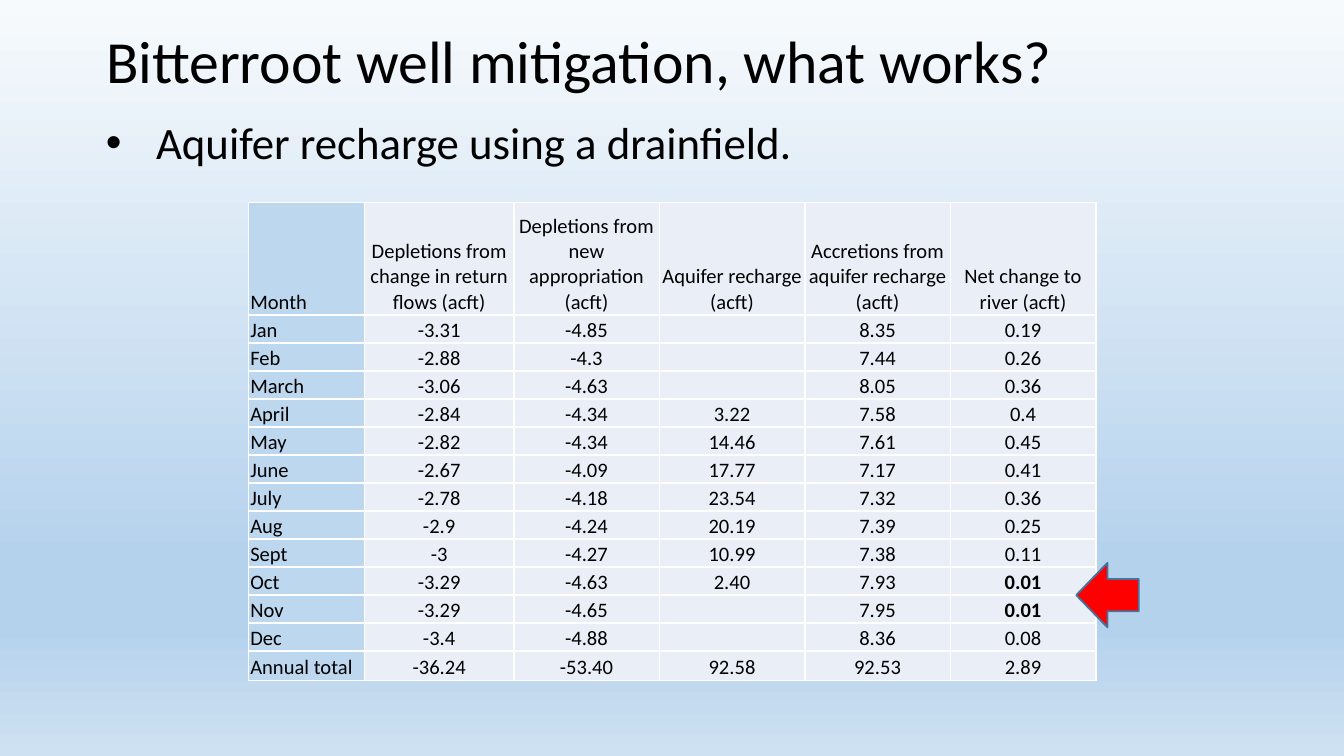
import pptx
import pptx.dml.color
import pptx.enum.shapes
import pptx.enum.text
import pptx.oxml
import pptx.oxml.ns
import pptx.util
from pptx.util import Cm

FONT = "Calibri"
COLOURS = {
    "text": "000000",
    "month": "BDD7EE",
    "value": "EAEFF7",
    "border": "FFFFFF",
    "arrow": "FF0000",
    "arrow_line": "43739E",
}
BACKGROUND_STOPS = [(0, "F7FAFD"), (74, "B5D2EC"), (83, "B5D2EC"), (100, "CEE1F2")]
HEADINGS = [
    "Month",
    "Depletions from change in return flows (acft)",
    "Depletions from new appropriation (acft)",
    "Aquifer recharge (acft)",
    "Accretions from aquifer recharge (acft)",
    "Net change to river (acft)",
]
MONTHLY_ROWS = [
    ["Jan", "-3.31", "-4.85", "", "8.35", "0.19"],
    ["Feb", "-2.88", "-4.3", "", "7.44", "0.26"],
    ["March", "-3.06", "-4.63", "", "8.05", "0.36"],
    ["April", "-2.84", "-4.34", "3.22", "7.58", "0.4"],
    ["May", "-2.82", "-4.34", "14.46", "7.61", "0.45"],
    ["June", "-2.67", "-4.09", "17.77", "7.17", "0.41"],
    ["July", "-2.78", "-4.18", "23.54", "7.32", "0.36"],
    ["Aug", "-2.9", "-4.24", "20.19", "7.39", "0.25"],
    ["Sept", "-3", "-4.27", "10.99", "7.38", "0.11"],
    ["Oct", "-3.29", "-4.63", "2.40", "7.93", "0.01"],
    ["Nov", "-3.29", "-4.65", "", "7.95", "0.01"],
    ["Dec", "-3.4", "-4.88", "", "8.36", "0.08"],
]
TOTALS = ["Annual total", "-36.24", "-53.40", "92.58", "92.53", "2.89"]
COLUMN_WIDTHS = [2.19, 2.82] + [2.75] * 4
ROW_HEIGHTS = [2.12] + [0.53] * len(MONTHLY_ROWS) + [0.55]


def rgb(name):
    return pptx.dml.color.RGBColor.from_string(COLOURS[name])


def parse_drawing(xml):
    """Parse an element that has attributes, declaring its namespace before them."""
    return pptx.oxml.parse_xml(xml.replace(" ", f" {pptx.oxml.ns.nsdecls('a')} ", 1))


def add_run(paragraph, text, size, bold=False):
    run = paragraph.add_run()
    run.text = text
    run.font.name = FONT
    run.font.size = pptx.util.Pt(size)
    run.font.bold = bold
    run.font.color.rgb = rgb("text")


def set_background(slide):
    fill = slide.background.fill
    fill.gradient()
    fill.gradient_angle = 270
    stops = slide.element.find(".//" + pptx.oxml.ns.qn("a:gsLst"))
    for stop in list(stops):
        stops.remove(stop)
    for percent, colour in BACKGROUND_STOPS:
        stops.append(parse_drawing(
            f'<a:gs pos="{percent * 1000}"><a:srgbClr val="{colour}"/></a:gs>'))


def write_line(shape, top, height, text, size):
    """Place a text shape on the shared left margin and fill its one paragraph."""
    shape.left, shape.top = Cm(1.75), Cm(top)
    shape.width, shape.height = Cm(21.9), Cm(height)
    frame = shape.text_frame
    frame.word_wrap = True
    frame.auto_size = pptx.enum.text.MSO_AUTO_SIZE.NONE
    frame.vertical_anchor = pptx.enum.text.MSO_ANCHOR.TOP
    paragraph = frame.paragraphs[0]
    paragraph.alignment = pptx.enum.text.PP_ALIGN.LEFT
    paragraph.line_spacing = 0.9
    add_run(paragraph, text, size)
    return paragraph


def add_bullet(paragraph, indent):
    properties = paragraph._p.get_or_add_pPr()
    properties.set("marL", str(indent))
    properties.set("indent", str(-indent))
    properties.append(parse_drawing('<a:buFont typeface="Arial"/>'))
    properties.append(parse_drawing('<a:buChar char="•"/>'))


def set_borders(cell):
    properties = cell._tc.get_or_add_tcPr()
    for side in ("lnL", "lnR", "lnT", "lnB"):
        properties.append(parse_drawing(
            f'<a:{side} w="12700"><a:solidFill><a:srgbClr val="{COLOURS["border"]}"/>'
            f'</a:solidFill></a:{side}>'))


def fill_cell(cell, text, is_month, bold):
    set_borders(cell)
    cell.fill.solid()
    cell.fill.fore_color.rgb = rgb("month" if is_month else "value")
    cell.margin_left = cell.margin_right = cell.margin_top = Cm(0.03)
    cell.margin_bottom = 0
    cell.vertical_anchor = pptx.enum.text.MSO_ANCHOR.BOTTOM
    paragraph = cell.text_frame.paragraphs[0]
    if not is_month:
        paragraph.alignment = pptx.enum.text.PP_ALIGN.CENTER
    if text:
        add_run(paragraph, text, 11, bold)
    else:
        # An empty cell needs the small size too, or its row grows.
        paragraph._p.append(parse_drawing('<a:endParaRPr sz="1100"/>'))


def add_water_table(slide):
    rows = [HEADINGS, *MONTHLY_ROWS, TOTALS]
    table = slide.shapes.add_table(
        len(rows), len(HEADINGS), Cm(4.7), Cm(3.83),
        Cm(sum(COLUMN_WIDTHS)), Cm(sum(ROW_HEIGHTS))).table
    table.first_row = table.horz_banding = False
    for column, width in zip(table.columns, COLUMN_WIDTHS):
        column.width = Cm(width)
    for row, height, texts in zip(table.rows, ROW_HEIGHTS, rows):
        row.height = Cm(height)
        for index, (cell, text) in enumerate(zip(row.cells, texts)):
            fill_cell(cell, text, is_month=index == 0, bold=text == "0.01")


def add_arrow(slide):
    arrow = slide.shapes.add_shape(
        pptx.enum.shapes.MSO_SHAPE.DOWN_ARROW, Cm(20.32), Cm(10.66), Cm(1.22), Cm(1.18))
    arrow.rotation = 90
    arrow.shadow.inherit = False
    arrow.fill.solid()
    arrow.fill.fore_color.rgb = rgb("arrow")
    arrow.line.color.rgb = rgb("arrow_line")
    arrow.line.width = pptx.util.Pt(1)


def main():
    presentation = pptx.Presentation()
    presentation.slide_width, presentation.slide_height = Cm(25.4), Cm(14.29)
    slide = presentation.slides.add_slide(presentation.slide_layouts[5])
    set_background(slide)
    write_line(slide.shapes.title, 0.48, 1.6, "Bitterroot well mitigation, what works?", 32)
    bullet_box = slide.shapes.add_textbox(0, 0, 0, 0)
    bullet = write_line(bullet_box, 2.15, 1.3, "Aquifer recharge using a drainfield.", 24)
    add_bullet(bullet, Cm(0.95))
    add_water_table(slide)
    add_arrow(slide)
    presentation.save("out.pptx")


if __name__ == "__main__":
    main()
